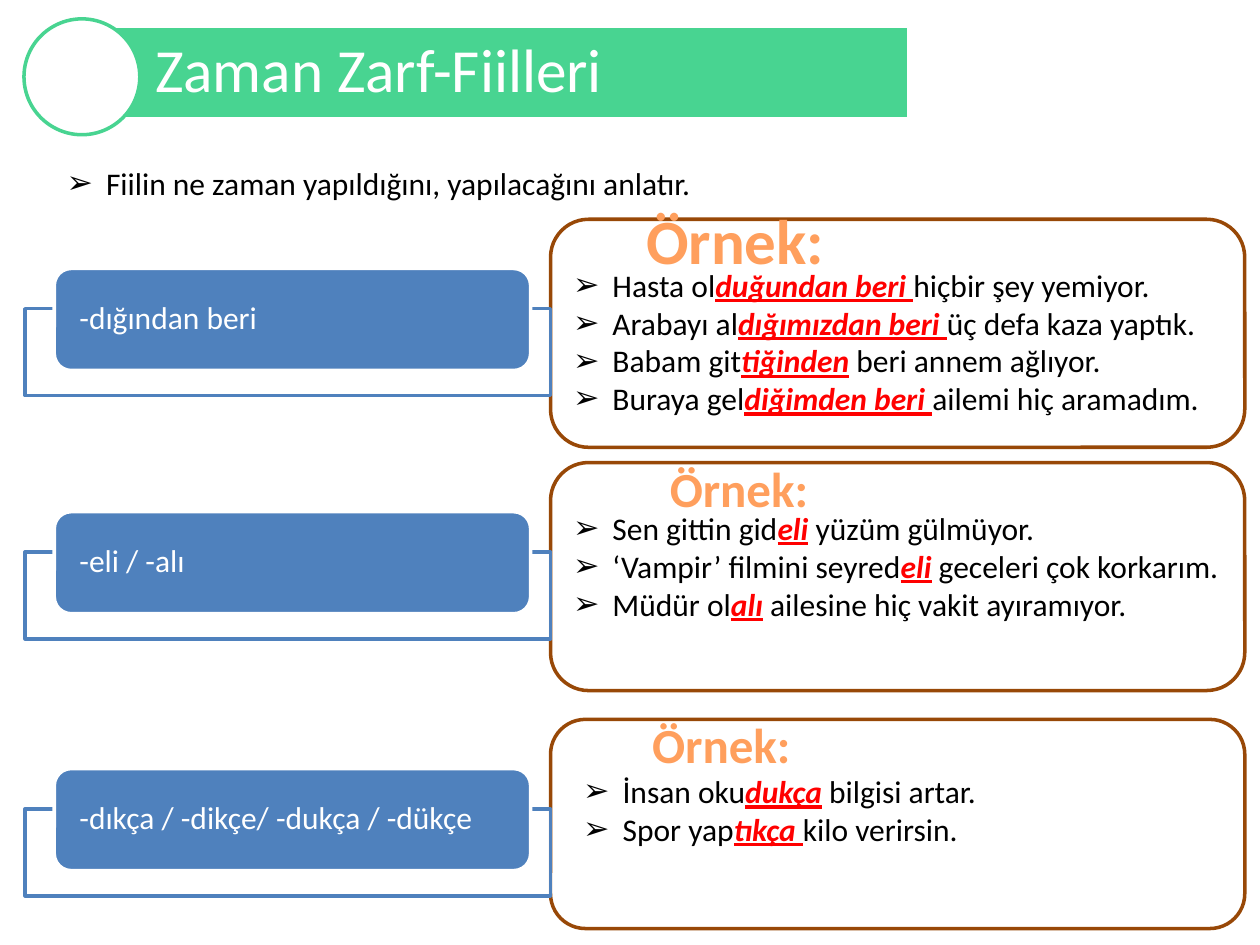
from lxml.etree import SubElement
from pptx import Presentation
from pptx.dml.color import RGBColor
from pptx.enum.shapes import MSO_SHAPE as Shape
from pptx.enum.text import MSO_ANCHOR as Anchor, PP_ALIGN as Align
from pptx.oxml.ns import qn
from pptx.util import Pt

TITLE = "Zaman Zarf-Fiilleri"
INTRO = [("Fiilin ne zaman yapıldığını, yapılacağını anlatır.",)]
HEADING = "Örnek:"
SECTIONS = [
    {"suffix": "-dığından beri", "top": 125.3, "height": 130.3,
     "heading": (361.4, -13.7, 117.4, 51.1, 36),
     "examples_at": (320.4, 23, 391, 116.6),
     "examples": [
         ("Hasta ol", "duğundan beri ", "hiçbir şey yemiyor."),
         ("Arabayı al", "dığımızdan beri ", "üç defa kaza yaptık."),
         ("Babam git", "tiğinden", " beri annem ağlıyor."),
         ("Buraya gel", "diğimden beri ", "ailemi hiç aramadım."),
     ]},
    {"suffix": "-eli / -alı", "top": 264.3, "height": 130.3,
     "heading": (375.1, -5.8, 94.3, 41, 28),
     "examples_at": (320.4, 23, 391, 94.3),
     "examples": [
         ("Sen gittin gid", "eli", " yüzüm gülmüyor."),
         ("‘Vampir’ filmini seyred", "eli", " geceleri çok korkarım."),
         ("Müdür ol", "alı", " ailesine hiç vakit ayıramıyor."),
     ]},
    {"suffix": "-dıkça / -dikçe/ -dukça / -dükçe", "top": 411.1, "height": 119.5,
     "heading": (365, -6.5, 94.3, 41, 28),
     "examples_at": (326.2, 26.6, 374.4, 72.7),
     "examples": [
         ("İnsan oku", "dukça", " bilgisi artar."),
         ("Spor yap", "tıkça ", "kilo verirsin."),
     ]},
]
GREEN, BLUE, BROWN, ORANGE = "48D491", "4F81BD", "984807", "FF9F5D"
WHITE, BLACK, RED = "FFFFFF", "000000", "FF0000"
PANEL_LEFT, PANEL_WIDTH = 314.6, 396.7
BRACKET_LEFT, BRACKET_DROP, BRACKET_HEIGHT = 14.4, 51.1, 49.7
LABEL_LEFT, LABEL_DROP, LABEL_WIDTH, LABEL_HEIGHT = 31, 28.1, 272.2, 58.3
INDENT = 22.5
STRESS = {"bold": True, "italic": True, "underline": True}


def color(value):
    return RGBColor.from_string(value)


def set_values(target, values):
    for name, value in values.items():
        setattr(target, name, value)


def add_box(slide, kind, place, fill, line):
    shape = slide.shapes.add_shape(kind, *map(Pt, place))
    shape.shadow.inherit = False
    shape.fill.solid()
    shape.fill.fore_color.rgb = color(fill)
    shape.line.color.rgb = color(line)
    shape.line.width = Pt(2)
    return shape


def add_run(paragraph, text, size, ink, **style):
    run = paragraph.add_run()
    run.text = text
    set_values(run.font, {"name": "Calibri", "size": Pt(size), **style})
    run.font.color.rgb = color(ink)


def write_label(shape, text, size, left, right):
    frame = shape.text_frame
    set_values(frame, {"word_wrap": True, "vertical_anchor": Anchor.MIDDLE,
                       "margin_left": Pt(left), "margin_right": Pt(right),
                       "margin_top": 0, "margin_bottom": 0})
    paragraph = frame.paragraphs[0]
    set_values(paragraph, {"alignment": Align.LEFT, "line_spacing": 0.9})
    add_run(paragraph, text, size, WHITE)


def add_text_box(slide, place, wrap):
    frame = slide.shapes.add_textbox(*map(Pt, place)).text_frame
    frame.word_wrap = wrap
    return frame


def write_bullets(frame, lines):
    for index, parts in enumerate(lines):
        paragraph = frame.add_paragraph() if index else frame.paragraphs[0]
        properties = paragraph._p.get_or_add_pPr()
        properties.set("marL", str(Pt(INDENT)))
        properties.set("indent", str(-Pt(INDENT)))
        SubElement(properties, qn("a:buFont")).set("typeface", "Arial")
        SubElement(properties, qn("a:buChar")).set("char", "➢")
        for position, text in enumerate(parts):
            if position == 1:
                add_run(paragraph, text, 18, RED, **STRESS)
            else:
                add_run(paragraph, text, 18, BLACK)


def add_section(slide, section):
    top = section["top"]
    add_box(slide, Shape.ROUNDED_RECTANGLE,
            (PANEL_LEFT, top, PANEL_WIDTH, section["height"]), WHITE, BROWN)

    left, drop, width, height = section["examples_at"]
    frame = add_text_box(slide, (left, top + drop, width, height), True)
    write_bullets(frame, section["examples"])

    left, drop, width, height, size = section["heading"]
    frame = add_text_box(slide, (left, top + drop, width, height), False)
    frame.paragraphs[0].alignment = Align.CENTER
    add_run(frame.paragraphs[0], HEADING, size, ORANGE, bold=True)

    bracket = add_box(slide, Shape.RECTANGLE,
                      (BRACKET_LEFT, top + BRACKET_DROP,
                       PANEL_LEFT - BRACKET_LEFT, BRACKET_HEIGHT), WHITE, BLUE)
    fill = bracket._element.spPr.find(qn("a:solidFill"))
    SubElement(fill[0], qn("a:alpha")).set("val", "90000")

    label = add_box(slide, Shape.ROUNDED_RECTANGLE,
                    (LABEL_LEFT, top + LABEL_DROP, LABEL_WIDTH, LABEL_HEIGHT),
                    BLUE, WHITE)
    write_label(label, section["suffix"], 18, 11.5, 11.5)


def main():
    presentation = Presentation()
    set_values(presentation, {"slide_width": Pt(720), "slide_height": Pt(540)})
    slide = presentation.slides.add_slide(presentation.slide_layouts[6])
    banner = add_box(slide, Shape.RECTANGLE, (46.8, 15.1, 472.3, 52.6), GREEN, WHITE)
    write_label(banner, TITLE, 35, 41.8, 7.2)
    add_box(slide, Shape.OVAL, (13.7, 10.8, 66.2, 66.2), WHITE, GREEN)
    write_bullets(add_text_box(slide, (31, 90, 375.1, 28.8), False), INTRO)
    for section in SECTIONS:
        add_section(slide, section)
    presentation.save("out.pptx")


if __name__ == "__main__":
    main()
